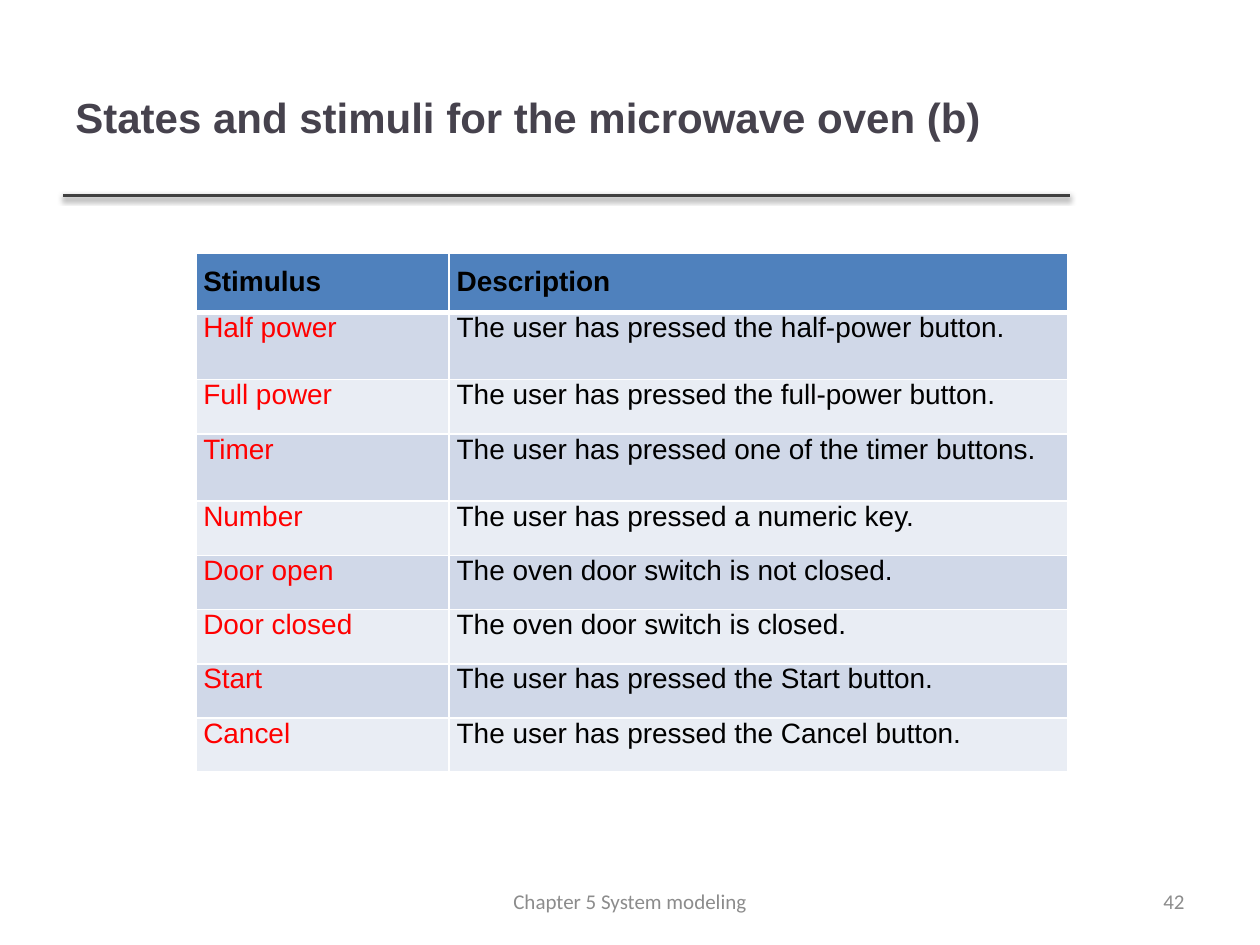
from lxml.etree import fromstring
from pptx import Presentation
from pptx.dml.color import RGBColor
from pptx.enum.shapes import MSO_CONNECTOR as Connector
from pptx.enum.text import MSO_ANCHOR as Anchor, PP_ALIGN as Align
from pptx.oxml.ns import nsdecls
from pptx.util import Pt

TITLE = "States and stimuli for the microwave oven (b)"
FOOTER = "Chapter 5 System modeling"
PAGE_NUMBER = "42"
HEADER = ("Stimulus", "Description")
STIMULI = [
    ("Half power", "The user has pressed the half-power button."),
    ("Full power", "The user has pressed the full-power button."),
    ("Timer", "The user has pressed one of the timer buttons."),
    ("Number", "The user has pressed a numeric key."),
    ("Door open", "The oven door switch is not closed."),
    ("Door closed", "The oven door switch is closed."),
    ("Start", "The user has pressed the Start button."),
    ("Cancel", "The user has pressed the Cancel button."),
]
TALL_STIMULI = ("Half power", "Timer")

BLACK = RGBColor(0x00, 0x00, 0x00)
RED = RGBColor(0xFF, 0x00, 0x00)
TITLE_INK = RGBColor(0x46, 0x42, 0x4D)
FOOTER_GRAY = RGBColor(0x8C, 0x8C, 0x8C)
RULE_GRAY = RGBColor(0x40, 0x40, 0x40)
HEADER_BLUE = RGBColor(0x4F, 0x81, 0xBD)
BANDS = (RGBColor(0xD0, 0xD8, 0xE8), RGBColor(0xE9, 0xED, 0xF4))

MARGIN = 36
RULE_TOP = 111.6
RULE_RIGHT = 611.3
FOOTER_TOP, FOOTER_HEIGHT = 500.5, 28.75
TABLE_LEFT, TABLE_TOP = 111.9, 145
COLUMN_WIDTHS = (144.8, 353.2)
ROW_HEIGHT, TALL_ROW_HEIGHT = 31, 38.4
THIN, THICK = 1, 3


def style(paragraph, font_name, size, color, align, bold=False):
    paragraph.alignment = align
    font = paragraph.font
    font.name, font.size, font.bold = font_name, Pt(size), bold
    font.color.rgb = color


def add_text(slide, box, text, *look):
    shape = slide.shapes.add_textbox(*map(Pt, box))
    frame = shape.text_frame
    frame.word_wrap = True
    frame.vertical_anchor = Anchor.MIDDLE
    frame.text = text
    style(frame.paragraphs[0], *look)


def add_rule(slide):
    rule = slide.shapes.add_connector(
        Connector.STRAIGHT, Pt(MARGIN), Pt(RULE_TOP), Pt(RULE_RIGHT), Pt(RULE_TOP))
    rule.line.color.rgb = RULE_GRAY
    rule.line.width = Pt(2)
    rule._element.spPr.append(fromstring(
        f'<a:effectLst {nsdecls("a")}>'
        f'<a:outerShdw blurRad="{Pt(3.1)}" dist="{Pt(1.6)}" dir="5400000" rotWithShape="0">'
        '<a:srgbClr val="000000"><a:alpha val="38000"/></a:srgbClr>'
        '</a:outerShdw></a:effectLst>'))


def set_borders(cell, top, bottom):
    properties = cell._tc.get_or_add_tcPr()
    for side, width in (("L", THIN), ("R", THIN), ("T", top), ("B", bottom)):
        properties.append(fromstring(
            f'<a:ln{side} {nsdecls("a")} w="{Pt(width)}"><a:solidFill>'
            f'<a:srgbClr val="FFFFFF"/></a:solidFill></a:ln{side}>'))


def add_stimulus_table(slide):
    rows = [HEADER, *STIMULI]
    heights = [TALL_ROW_HEIGHT if row[0] in TALL_STIMULI else ROW_HEIGHT for row in rows]
    table = slide.shapes.add_table(
        len(rows), len(HEADER), Pt(TABLE_LEFT), Pt(TABLE_TOP),
        Pt(sum(COLUMN_WIDTHS)), Pt(sum(heights))).table
    for column, width in zip(table.columns, COLUMN_WIDTHS):
        column.width = Pt(width)
    for r, (row, height) in enumerate(zip(rows, heights)):
        table.rows[r].height = Pt(height)
        is_header = r == 0
        for c, text in enumerate(row):
            cell = table.cell(r, c)
            cell.text = text
            cell.margin_left = cell.margin_right = Pt(4.3)
            cell.margin_top = Pt(7.2 if is_header else 0)
            cell.margin_bottom = Pt(7.2)
            set_borders(cell, THICK if r == 1 else THIN, THICK if is_header else THIN)
            cell.fill.solid()
            cell.fill.fore_color.rgb = HEADER_BLUE if is_header else BANDS[(r - 1) % 2]
            color = RED if c == 0 and not is_header else BLACK
            style(cell.text_frame.paragraphs[0], "Arial", 16, color, Align.JUSTIFY, is_header)


def main():
    presentation = Presentation()
    presentation.slide_width, presentation.slide_height = Pt(720), Pt(540)
    slide = presentation.slides.add_slide(presentation.slide_layouts[6])
    add_rule(slide)
    add_text(slide, (MARGIN, 21.6, 574.6, 90), TITLE, "Arial", 24, TITLE_INK, Align.LEFT, True)
    add_stimulus_table(slide)
    add_text(slide, (516, FOOTER_TOP, 168, FOOTER_HEIGHT), PAGE_NUMBER,
             "Calibri", 12, FOOTER_GRAY, Align.RIGHT)
    add_text(slide, (246, FOOTER_TOP, 228, FOOTER_HEIGHT), FOOTER,
             "Calibri", 12, FOOTER_GRAY, Align.CENTER)
    presentation.save("out.pptx")


if __name__ == "__main__":
    main()
